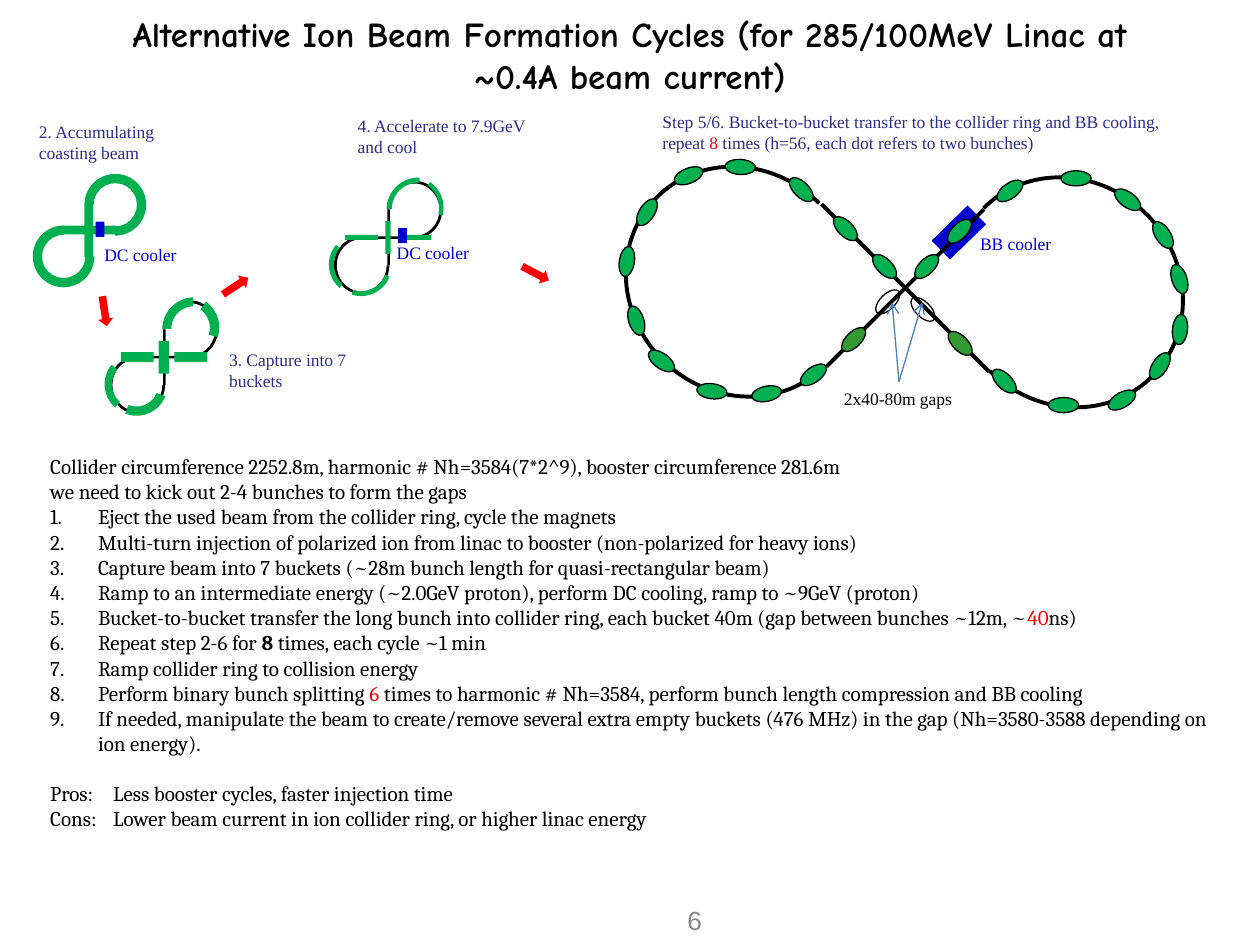
import dataclasses

import pptx
import pptx.dml.color
import pptx.enum.shapes
import pptx.enum.text
import pptx.oxml.ns
import pptx.util
from lxml import etree

RGBColor = pptx.dml.color.RGBColor
Kind = pptx.enum.shapes.MSO_SHAPE
Align = pptx.enum.text.PP_ALIGN
Anchor = pptx.enum.text.MSO_ANCHOR

BLACK = RGBColor(0x00, 0x00, 0x00)
GRAY = RGBColor(0x89, 0x89, 0x89)
RED = RGBColor(0xFF, 0x00, 0x00)
BLUE = RGBColor(0x00, 0x00, 0xCC)
NAVY = RGBColor(0x2D, 0x2D, 0x8A)
STEEL = RGBColor(0x4B, 0x7E, 0xBC)
GREEN = RGBColor(0x00, 0xB0, 0x50)
DARK_GREEN = RGBColor(0x33, 0x99, 0x33)

TITLE = {"name": "Comic Neue", "size": 20, "bold": True, "color": BLACK}
BODY = {"name": "Cambria", "size": 12, "bold": False, "color": BLACK}
NUMBER = {"name": "Arial", "size": 15, "bold": False, "color": GRAY}
CAPTION = {"name": "Times New Roman", "size": 10, "bold": False, "color": NAVY}
COOLER = {**CAPTION, "color": BLUE}

# The slide is a grid of 100 columns by 75 rows
SLIDE_WIDTH, SLIDE_HEIGHT = pptx.util.Inches(10), pptx.util.Inches(7.5)
COLUMN, ROW = SLIDE_WIDTH / 100, SLIDE_HEIGHT / 75


@dataclasses.dataclass
class Box:
    left: float
    top: float
    width: float
    height: float

    def inner(self, left, top, width, height):
        return Box(self.left + left, self.top + top, width, height)

    def centred(self, x, y, width, height):
        return self.inner(x - width / 2, y - height / 2, width, height)

    def point(self, x, y):
        return round((self.left + x) * COLUMN), round((self.top + y) * ROW)

    def lengths(self):
        return *self.point(0, 0), round(self.width * COLUMN), round(self.height * ROW)


def add_part(slide, kind, box, fill=None, line=None, rotation=0, adjustments=()):
    shape = slide.shapes.add_shape(kind, *box.lengths())
    shape.shadow.inherit = False
    shape.rotation = rotation
    for index, value in enumerate(adjustments):
        shape.adjustments[index] = value
    if fill is None:
        shape.fill.background()
    else:
        shape.fill.solid()
        shape.fill.fore_color.rgb = fill
    if line is None:
        shape.line.fill.background()
    else:
        shape.line.color.rgb = BLACK
        shape.line.width = pptx.util.Pt(line)
    return shape


def add_line(slide, start, end, color, width, arrow=False):
    connector = slide.shapes.add_connector(
        pptx.enum.shapes.MSO_CONNECTOR.STRAIGHT, *start, *end)
    connector.line.color.rgb = color
    connector.line.width = pptx.util.Pt(width)
    if arrow:
        line = connector.line._get_or_add_ln()
        etree.SubElement(line, pptx.oxml.ns.qn("a:tailEnd"), type="arrow")
    etree.SubElement(connector._element.spPr, pptx.oxml.ns.qn("a:effectLst"))
    return connector


def add_runs(paragraph, runs, style):
    """Each run is plain text or a pair of text and changed format values."""
    for item in [runs] if isinstance(runs, str) else runs:
        text, changes = (item, {}) if isinstance(item, str) else item
        run = paragraph.add_run()
        run.text = text
        values = {**style, **changes}
        run.font.color.rgb = values.pop("color")
        values["size"] = pptx.util.Pt(values["size"])
        for name, value in values.items():
            setattr(run.font, name, value)


def add_text(slide, box, paragraphs, style, wrap=True, align=Align.LEFT, anchor=Anchor.TOP):
    shape = slide.shapes.add_textbox(*box.lengths())
    frame = shape.text_frame
    frame.word_wrap = wrap
    frame.vertical_anchor = anchor
    for index, runs in enumerate(paragraphs):
        paragraph = frame.paragraphs[0] if index == 0 else frame.add_paragraph()
        paragraph.alignment = align
        add_runs(paragraph, runs, style)
    return shape


def add_cooler(slide, box, label_left, label_top):
    add_part(slide, Kind.RECTANGLE, box, BLUE)
    add_text(slide, box.inner(label_left, label_top, 7.8, 2.7), ["DC cooler"], COOLER, wrap=False)


def accumulating_ring(slide, box):
    """Step 2: a full ring of coasting beam."""
    add_text(slide, box.inner(-0.5, -4.7, 15.2, 4.4), ["2. Accumulating coasting beam"], CAPTION)
    for left, top, width, height in [(2.4, 4.1, 4.2, 0.7), (4.1, 2.4, 0.7, 4.2)]:
        add_part(slide, Kind.RECTANGLE, box.inner(left, top, width, height), GREEN)
    for left, top, rotation in [(0, 4.1, 180), (4.1, 0, 0)]:
        add_part(slide, Kind.BLOCK_ARC, box.inner(left, top, 4.9, 4.9), GREEN,
                 rotation=rotation, adjustments=(108, 54.4, 0.15))
    add_cooler(slide, box.inner(5, 3.8, 0.7, 1.2), -0.3, 1.3)


def bunched_ring(slide, box, thickness, arcs, caption, caption_box):
    """Steps 3 and 4: a thin ring carrying bunches of the given thickness."""
    add_text(slide, caption_box, [caption], CAPTION)
    for rotation in (90, 0):
        add_part(slide, Kind.RECTANGLE, box.centred(4.75, 4.85, 4.4, 0.2), BLACK, rotation=rotation)
    for left, top, rotation in [(0.4, 4.75, 180), (4.6, 0.35, 0)]:
        add_part(slide, Kind.BLOCK_ARC, box.inner(left, top, 4.4, 4.6), BLACK,
                 rotation=rotation, adjustments=(108, 54.99, 0.05))
    places = [(0, 4.55, 4.9, 133.6), (4.6, 0.1, 5, 0), (4.1, 0, 5, 90), (0.1, 4.6, 4.9, 51.1)]
    for (left, top, size, rotation), adjustments in zip(places, arcs):
        add_part(slide, Kind.BLOCK_ARC, box.inner(left, top, size, size), GREEN,
                 rotation=rotation, adjustments=adjustments)
    for x, rotation in [(2.6, 0), (6.85, 0), (4.7, 270)]:
        add_part(slide, Kind.RECTANGLE, box.centred(x, 4.85, 2.6, thickness), GREEN, rotation=rotation)


def collider_ring(slide, box):
    """Steps 5 and 6: the figure-eight collider with its bunches."""
    add_text(slide, box.inner(2.6, 0.3, 44.3, 4.4), [[
        "Step 5/6. Bucket-to-bucket transfer to the collider ring and BB cooling, repeat ",
        ("8", {"color": RED}), " times (h=56, each dot refers to two bunches)"]], CAPTION)
    add_part(slide, Kind.RECTANGLE, box.centred(27.1, 10.45, 4, 2.1), BLUE, rotation=315.7)
    # Track
    for start, end in [((29.1, 8.6), (16.6, 21.1)), ((29.5, 21.5), (16.2, 8.2))]:
        add_line(slide, box.point(*start), box.point(*end), BLACK, 2.25)
    for x, y, outer_rotation in [(35.75, 15.2, 45), (9.8, 14.35, 225)]:
        for width, height, rotation in [(18.9, 17.6, outer_rotation),
                                        (17.6, 18.9, 315), (17.6, 18.9, 135)]:
            add_part(slide, Kind.ARC, box.centred(x, y, width, height), line=2.25, rotation=rotation)
    # Bunches: centre and rotation, grouped by fill; the empty ones are the gaps
    bunches = {
        GREEN: [(24.55, 13.15, 45), (27.15, 10.35, 45), (31.15, 7.15, 54), (36.4, 6.15, 90),
                (40.5, 7.85, 126), (43.3, 10.65, 147), (44.6, 14.15, 162), (30.7, 22.25, 315),
                (35.4, 24.15, 270), (40.05, 23.75, 240), (43.05, 21.05, 213), (44.65, 18.15, 186),
                (15.55, 21.75, 54), (11.85, 23.25, 258), (7.5, 23.05, 277), (3.5, 20.65, 306),
                (1.5, 17.45, 342), (18.1, 10.15, 315), (14.6, 7.05, 315), (9.75, 5.25, 93),
                (5.65, 5.95, 68), (2.35, 8.85, 33), (0.75, 12.75, 9), (21.2, 13.15, 315)],
        DARK_GREEN: [(27.2, 19.25, 315), (18.75, 18.95, 45)],
        None: [(21.45, 15.95, 45), (24.25, 16.55, 315)],
    }
    for fill, places in bunches.items():
        for x, y, rotation in places:
            add_part(slide, Kind.OVAL, box.centred(x, y, 1.2, 2.4), fill, 0.75, rotation)
    add_text(slide, box.inner(27.8, 10, 9.9, 2.7), ["BB cooler"], COOLER)
    # Gap label with its two pointers
    label = add_text(slide, box.inner(17, 22.3, 10.7, 2.7), ["2x40-80m gaps"],
                     {**CAPTION, "color": BLACK}, wrap=False)
    for x in (21.8, 24.2):
        pointer = add_line(slide, box.point(22.4, 22.3), box.point(x, 16), STEEL, 0.75, arrow=True)
        pointer.begin_connect(label, 0)


def step_arrows(slide, box):
    for x, y, rotation in [(8.3, 24.7, 81.4), (18.7, 22.7, 326.7), (42.5, 21.7, 27.7)]:
        add_part(slide, Kind.RIGHT_ARROW, box.centred(x, y, 2.4, 1.2), RED, rotation=rotation)


def procedure(slide, box):
    intro = ["Collider circumference 2252.8m, harmonic # Nh=3584(7*2^9), booster circumference 281.6m",
             "we need to kick out 2-4 bunches to form the gaps"]
    steps = [
        "Eject the used beam from the collider ring, cycle the magnets",
        "Multi-turn injection of polarized ion from linac to booster (non-polarized for heavy ions)",
        "Capture beam into 7 buckets (~28m bunch length for quasi-rectangular beam)",
        "Ramp to an intermediate energy (~2.0GeV proton), perform DC cooling, ramp to ~9GeV (proton)",
        ["Bucket-to-bucket transfer the long bunch into collider ring, each bucket 40m "
         "(gap between bunches ~12m, ~", ("40", {"color": RED}), "ns)"],
        ["Repeat step 2-6 for ", ("8", {"bold": True}), " times, each cycle ~1 min"],
        "Ramp collider ring to collision energy",
        ["Perform binary bunch splitting ", ("6", {"color": RED}),
         " times to harmonic # Nh=3584, perform bunch length compression and BB cooling"],
        "If needed, manipulate the beam to create/remove several extra empty buckets (476 MHz) "
        "in the gap (Nh=3580-3588 depending on ion energy).",
    ]
    verdict = ["Pros:\tLess booster cycles, faster injection time",
               "Cons:\tLower beam current in ion collider ring, or higher linac energy"]
    shape = add_text(slide, box, intro + steps + verdict, BODY)
    paragraphs = shape.text_frame.paragraphs
    indent = round(3.8 * COLUMN)
    for paragraph in paragraphs[len(intro):-len(verdict)]:
        properties = paragraph._p.get_or_add_pPr()
        properties.set("marL", str(indent))
        properties.set("indent", str(-indent))
        etree.SubElement(properties, pptx.oxml.ns.qn("a:buAutoNum"), type="arabicPeriod")
    paragraphs[-len(verdict)].space_before = pptx.util.Pt(14)


def main():
    presentation = pptx.Presentation()
    presentation.slide_width, presentation.slide_height = SLIDE_WIDTH, SLIDE_HEIGHT
    slide = presentation.slides.add_slide(presentation.slide_layouts[6])
    page = Box(0, 0, 100, 75)

    add_text(slide, page.inner(7.5, 0, 85, 8.6),
             ["Alternative Ion Beam Formation Cycles (for 285/100MeV Linac at ~0.4A beam current)"],
             TITLE, align=Align.CENTER, anchor=Anchor.MIDDLE)
    add_text(slide, page.inner(49.2, 71, 7.5, 4), ["6"], NUMBER,
             align=Align.RIGHT, anchor=Anchor.MIDDLE)
    procedure(slide, page.inner(3, 35.5, 95, 31.3))
    accumulating_ring(slide, page.inner(2.6, 13.8, 9, 9))
    bunched_ring(slide, page.inner(8.3, 23.5, 9.6, 9.5), 0.8,
                 [(214.48, 51.47, 0.12), (108, 160.75, 0.14), (129, 173.02, 0.15), (198.55, 36.57, 0.15)],
                 "3. Capture into 7 buckets", page.inner(17.2, 27.2, 15, 4.4))
    bunched_ring(slide, page.inner(26.1, 14, 9.6, 9.5), 0.4,
                 [(214.48, 51.83, 0.08), (108, 163.49, 0.08), (129, 170.39, 0.07), (198.55, 33.66, 0.08)],
                 "4. Accelerate to 7.9GeV and cool", page.inner(27.4, 8.6, 16.4, 4.4))
    add_cooler(slide, page.inner(31.6, 18.1, 0.7, 1.2), -1.1, 0.6)
    collider_ring(slide, page.inner(49, 8, 47, 25))
    step_arrows(slide, page)
    presentation.save("out.pptx")


if __name__ == "__main__":
    main()
